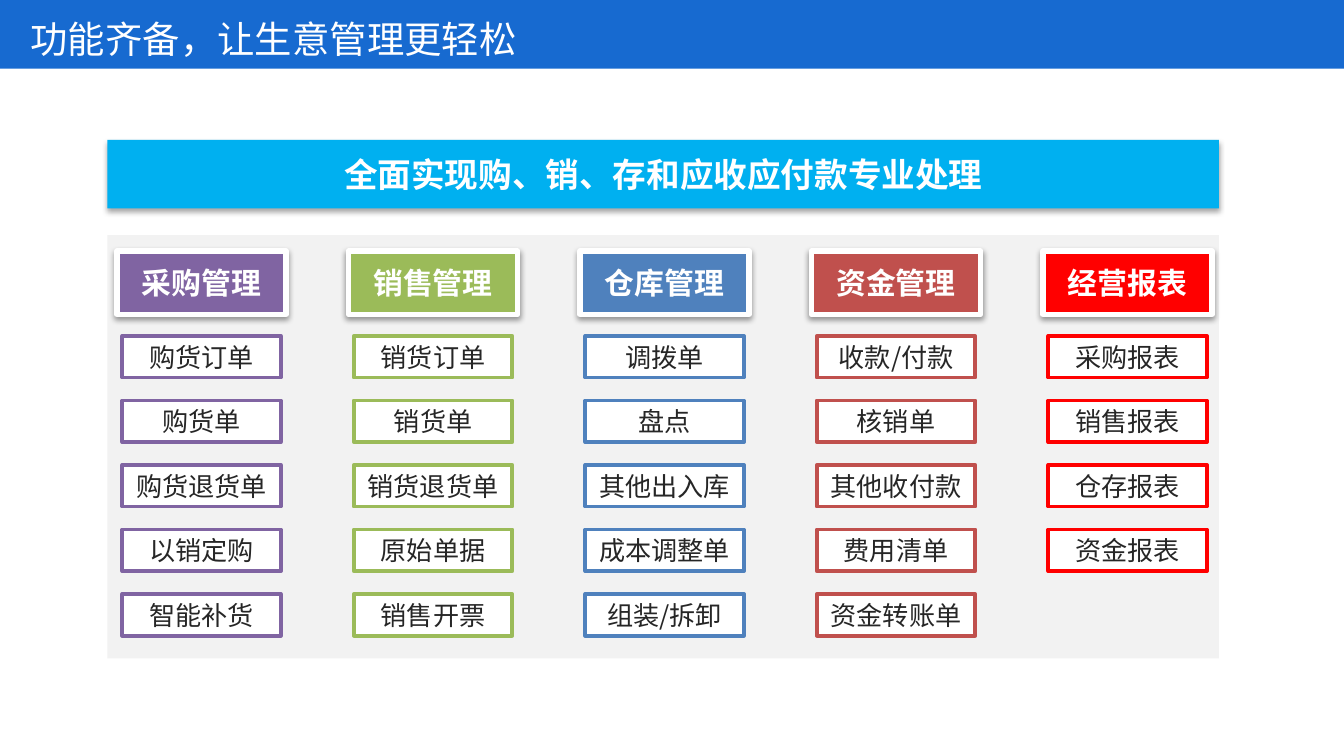
from dataclasses import dataclass

from lxml.etree import SubElement
from pptx import Presentation
from pptx.dml.color import RGBColor
from pptx.enum.shapes import MSO_SHAPE
from pptx.enum.text import MSO_ANCHOR, PP_ALIGN
from pptx.oxml.ns import qn
from pptx.util import Inches, Pt


@dataclass(frozen=True)
class Theme:
    font: str = "Noto Sans CJK SC"
    title_bar: str = "176AD0"
    banner: str = "00B0F0"
    panel: str = "F2F2F2"
    white: str = "FFFFFF"
    ink: str = "262626"
    title_size: int = 20
    banner_size: int = 18
    header_size: int = 16
    item_size: int = 14


theme = Theme()

MODULES = [
    ("采购管理", "8064A2", ["购货订单", "购货单", "购货退货单", "以销定购", "智能补货"]),
    ("销售管理", "9BBB59", ["销货订单", "销货单", "销货退货单", "原始单据", "销售开票"]),
    ("仓库管理", "4F81BD", ["调拨单", "盘点", "其他出入库", "成本调整单", "组装/拆卸"]),
    ("资金管理", "C0504D", ["收款/付款", "核销单", "其他收付款", "费用清单", "资金转账单"]),
    ("经营报表", "FF0000", ["采购报表", "销售报表", "仓存报表", "资金报表"]),
]

prs = Presentation()
prs.slide_width = Inches(10)
prs.slide_height = Inches(10 * 9 / 16)
slide = prs.slides.add_slide(prs.slide_layouts[6])


def write(shape, text, size, color, bold=False, align=PP_ALIGN.CENTER):
    frame = shape.text_frame
    frame.word_wrap = True
    frame.vertical_anchor = MSO_ANCHOR.MIDDLE
    paragraph = frame.paragraphs[0]
    paragraph.alignment = align
    run = paragraph.add_run()
    run.text = text
    run.font.size, run.font.bold, run.font.name = Pt(size), bold, theme.font
    run.font.color.rgb = RGBColor.from_string(color)
    SubElement(run.font._element, qn("a:ea"), typeface=theme.font)


def add_box(left, top, width, height, fill, line=None, line_width=0, shadow=None):
    """Add a rectangle; shadow is (opacity in percent, distance in points)."""
    box = slide.shapes.add_shape(
        MSO_SHAPE.RECTANGLE, Inches(left), Inches(top), Inches(width), Inches(height))
    box.fill.solid()
    box.fill.fore_color.rgb = RGBColor.from_string(fill)
    if line:
        box.line.color.rgb = RGBColor.from_string(line)
        box.line.width = Pt(line_width)
    else:
        box.line.fill.background()
    box.text_frame.margin_left = box.text_frame.margin_right = 0
    box.shadow.inherit = False
    if shadow:
        opacity, distance = shadow
        effects = box._element.spPr.find(qn("a:effectLst"))
        outer = SubElement(effects, qn("a:outerShdw"), blurRad=str(Pt(3.1)),
                           dist=str(Pt(distance)), dir="5400000", rotWithShape="0")
        black = SubElement(outer, qn("a:srgbClr"), val="000000")
        SubElement(black, qn("a:alpha"), val=str(opacity * 1000))
    return box


# Title bar
add_box(0, -0.01, 10, 0.52, theme.title_bar)
title = slide.shapes.add_textbox(Inches(0.13), Inches(0), Inches(7.8), Inches(0.57))
write(title, "功能齐备，让生意管理更轻松", theme.title_size, theme.white, align=PP_ALIGN.LEFT)

# Banner and panel
banner = add_box(0.8, 1.04, 8.27, 0.51, theme.banner, shadow=(35, 1.8))
write(banner, "全面实现购、销、存和应收应付款专业处理", theme.banner_size, theme.white, bold=True)
add_box(0.8, 1.75, 8.27, 3.15, theme.panel)

# One column per module
FIRST_LEFT, LAST_LEFT = 0.87, 7.76
HEADER_WIDTH, ITEM_WIDTH = 1.26, 1.18
FIRST_ITEM_TOP, ITEM_PITCH = 2.5, 0.48
column_pitch = (LAST_LEFT - FIRST_LEFT) / (len(MODULES) - 1)

for column, (module, color, items) in enumerate(MODULES):
    left = FIRST_LEFT + column * column_pitch
    header = add_box(left, 1.87, HEADER_WIDTH, 0.47, color, theme.white, 3, shadow=(38, 1.6))
    write(header, module, theme.header_size, theme.white, bold=True)
    item_left = left + (HEADER_WIDTH - ITEM_WIDTH) / 2
    for row, item in enumerate(items):
        item_box = add_box(item_left, FIRST_ITEM_TOP + row * ITEM_PITCH, ITEM_WIDTH, 0.31,
                           theme.white, color, 2)
        write(item_box, item, theme.item_size, theme.ink)

prs.save("out.pptx")
